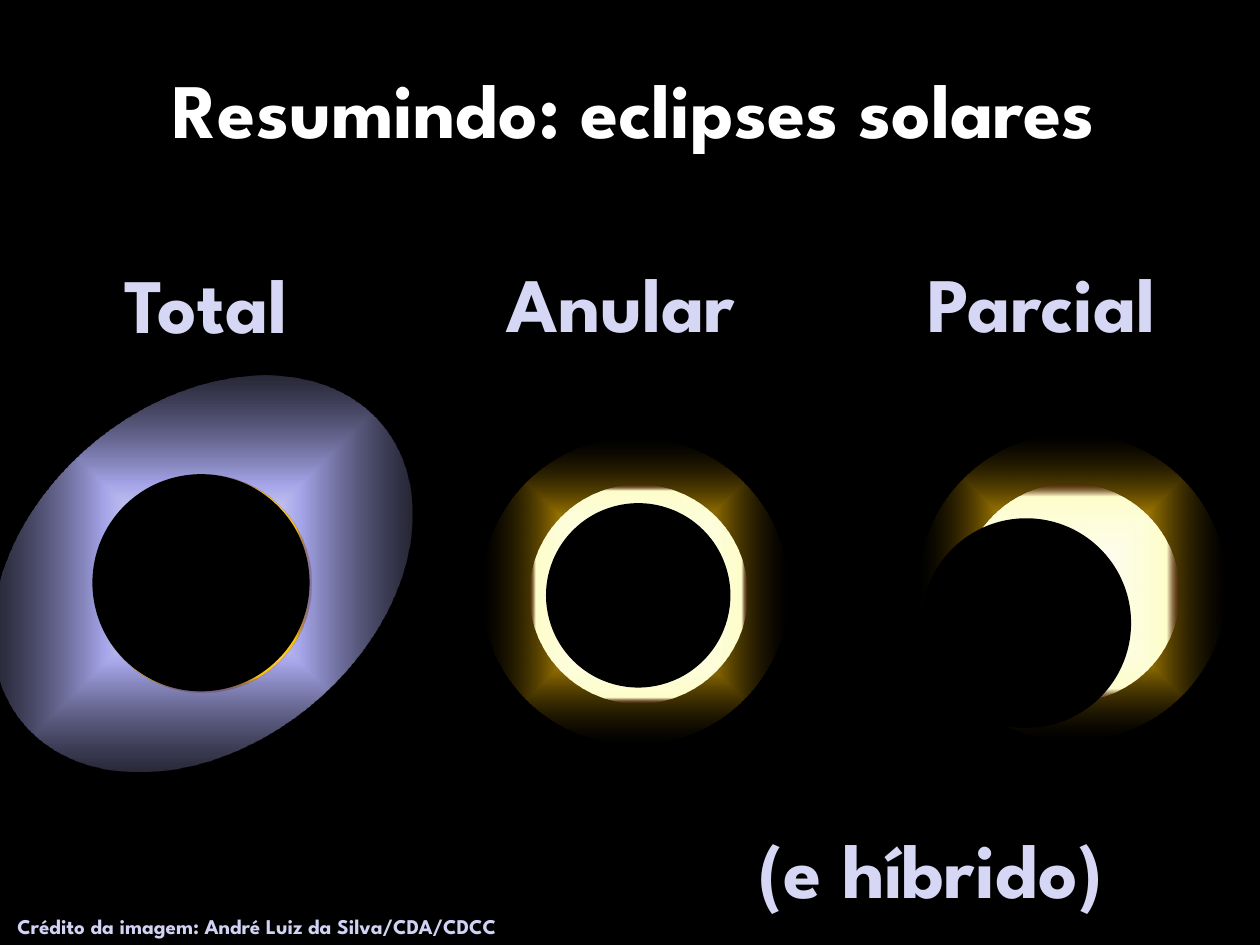
"""Build a slide that sums up the kinds of solar eclipse."""
from lxml.etree import SubElement
from pptx import Presentation
from pptx.dml.color import RGBColor
from pptx.enum.shapes import MSO_SHAPE
from pptx.enum.text import MSO_ANCHOR, PP_ALIGN
from pptx.oxml.ns import qn
from pptx.util import Inches, Pt

FONT = "League Spartan"
LAVENDER = "D6D6F5"
BLACK = "000000"

TITLE = ("Resumindo: eclipses solares", (0.31, 0.23, 9.45, 1.25))
LABELS = [
    ("Total ", (0.55, 1.71, 2.34, 1.02)),
    ("Parcial ", (7.1, 1.7, 2.5, 1.02)),
    ("Anular ", (3.76, 1.86, 2.5, 0.7)),
    ("(e híbrido)", (5.47, 6.19, 3.84, 1.02)),
]
CREDIT = ("Crédito da imagem: André Luiz da Silva/CDA/CDCC", (0.04, 7.2, 5.28, 0.3))

# corona and sun: place, middle colour and its stop; moon: place
ECLIPSES = [
    {"corona": ((-0.24, 3.2, 3.7, 2.7), "A5A5E9"), "tilt": 320.6,
     "sun": ((0.74, 3.77, 1.73, 1.73), "FFC000", 85), "moon": (0.74, 3.77, 1.71, 1.71)},
    {"corona": ((3.82, 3.47, 2.44, 2.44), "FFC000"), "tilt": 0,
     "sun": ((4.2, 3.85, 1.73, 1.73), "FFFFCC", 94), "moon": (4.34, 4, 1.45, 1.45)},
    {"corona": ((7.29, 3.44, 2.44, 2.44), "FFC000"), "tilt": 0,
     "sun": ((7.63, 3.84, 1.73, 1.73), "FFFFCC", 88), "moon": (7.32, 4.12, 1.65, 1.65)},
]


def color(code):
    return RGBColor.from_string(code)


def add_text(page, text, place, size, code, align, anchor, spacing=None):
    box = page.shapes.add_textbox(*map(Inches, place))
    frame = box.text_frame
    frame.word_wrap = True
    frame.vertical_anchor = anchor
    para = frame.paragraphs[0]
    para.alignment = align
    para.line_spacing = spacing
    span = para.add_run()
    span.text = text
    span.font.name = FONT
    span.font.size = Pt(size)
    span.font.bold = True
    span.font.color.rgb = color(code)


def add_disc(page, place):
    disc = page.shapes.add_shape(MSO_SHAPE.OVAL, *map(Inches, place))
    disc.shadow.inherit = False
    disc.line.fill.background()
    return disc


def add_glow(page, place, stops):
    disc = add_disc(page, place)
    disc.fill.gradient()
    gradient = disc.fill._xPr.find(qn("a:gradFill"))
    for child in list(gradient):
        gradient.remove(child)
    stop_list = SubElement(gradient, qn("a:gsLst"))
    for position, code, opacity in stops:
        stop = SubElement(stop_list, qn("a:gs"), pos=str(position * 1000))
        tone = SubElement(stop, qn("a:srgbClr"), val=code)
        if opacity < 100:
            SubElement(tone, qn("a:alpha"), val=str(opacity * 1000))
    shade = SubElement(gradient, qn("a:path"), path="shape")
    SubElement(shade, qn("a:fillToRect"), l="50000", t="50000", r="50000", b="50000")
    return disc


def add_eclipse(page, eclipse):
    place, middle = eclipse["corona"]
    corona = add_glow(page, place, [(7, "FFFFFF", 100), (32, middle, 100), (100, BLACK, 23)])
    corona.rotation = eclipse["tilt"]
    place, middle, reach = eclipse["sun"]
    add_glow(page, place, [(12, "FFFFFF", 100), (reach, middle, 100), (100, "4D0808", 17)])
    moon = add_disc(page, eclipse["moon"])
    moon.fill.solid()
    moon.fill.fore_color.rgb = color(BLACK)
    moon.line.color.rgb = color(BLACK)
    moon.line.width = Pt(1)


def main():
    deck = Presentation()
    deck.slide_width, deck.slide_height = Inches(10), Inches(7.5)
    page = deck.slides.add_slide(deck.slide_layouts[6])
    page.background.fill.solid()
    page.background.fill.fore_color.rgb = color(BLACK)
    add_text(page, *TITLE, 44, "FFFFFF", PP_ALIGN.CENTER, MSO_ANCHOR.MIDDLE)
    for text, place in LABELS:
        add_text(page, text, place, 44, LAVENDER, PP_ALIGN.CENTER, MSO_ANCHOR.MIDDLE, 1.5)
    for eclipse in ECLIPSES:
        add_eclipse(page, eclipse)
    add_text(page, *CREDIT, 12, "D2D2F4", PP_ALIGN.LEFT, MSO_ANCHOR.TOP)
    deck.save("out.pptx")


if __name__ == "__main__":
    main()
